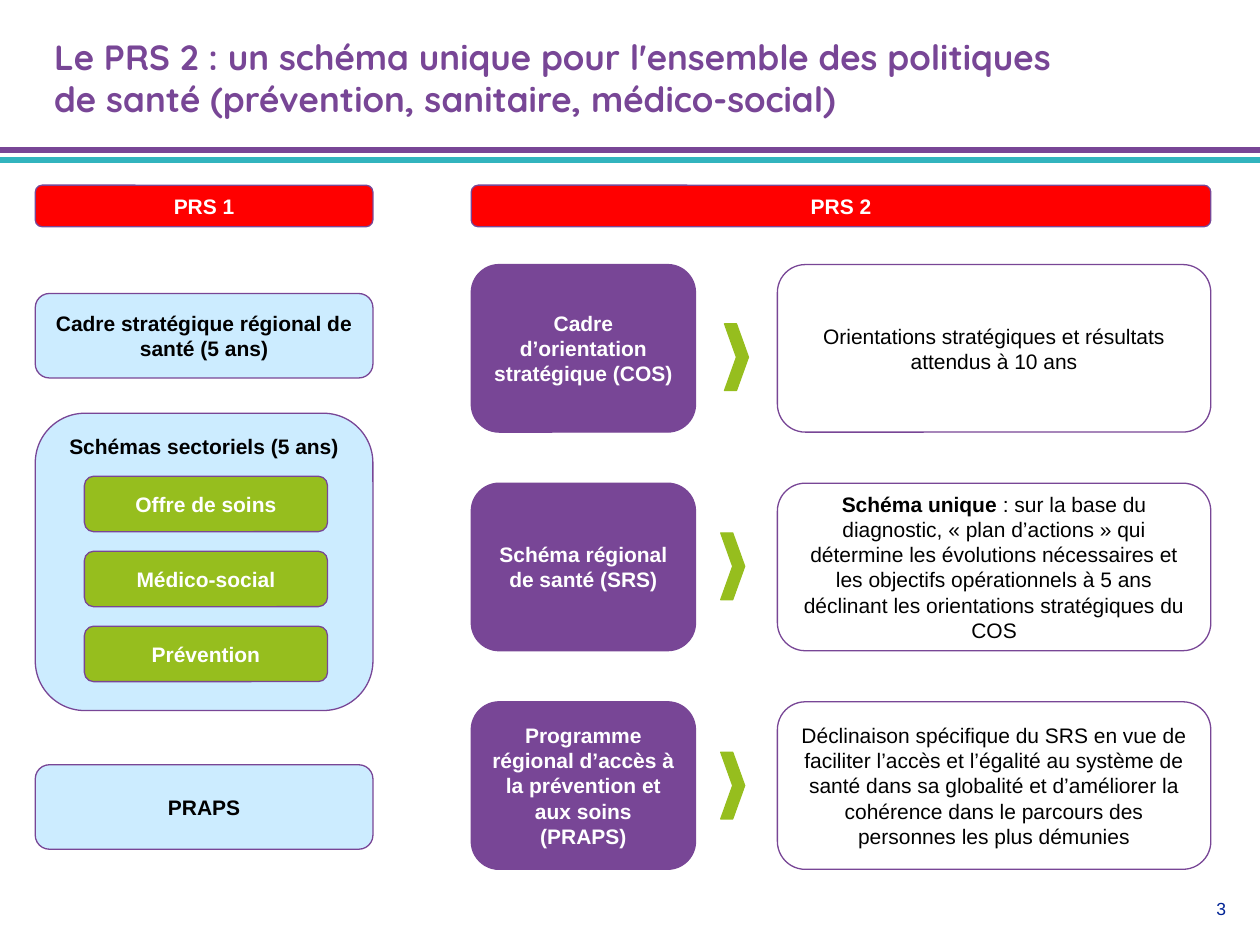
from lxml.etree import SubElement
from pptx import Presentation
from pptx.dml.color import RGBColor
from pptx.enum.shapes import MSO_CONNECTOR, MSO_SHAPE
from pptx.enum.text import MSO_ANCHOR, PP_ALIGN
from pptx.oxml.ns import qn
from pptx.util import Inches, Pt

PURPLE, TEAL, GREEN = "784696", "32B4BE", "96BE1E"
RED, PALE, WHITE, BLACK, NAVY = "FF0000", "CCECFF", "FFFFFF", "000000", "002395"


def color(code):
    return RGBColor.from_string(code)


class Deck:
    """Holds the style and the slide, laid out on a grid of 100 columns by 75 rows."""

    def __init__(self):
        self.prs = Presentation()
        self.prs.slide_width, self.prs.slide_height = Inches(10), Inches(7.5)
        self.col = self.prs.slide_width / 100
        self.row = self.prs.slide_height / 75
        self.font, self.size = "Arial", 12
        self.slide = self.prs.slides.add_slide(self.prs.slide_layouts[5])

    def frame(self, x, y, w, h):
        return (round(x * self.col), round(y * self.row),
                round(w * self.col), round(h * self.row))

    def style(self, font, ink, size, bold, name=None):
        font.name, font.size, font.bold = name or self.font, Pt(size), bold
        font.color.rgb = color(ink)

    def title(self, text, *place):
        head = self.slide.shapes.title
        head.left, head.top, head.width, head.height = self.frame(*place)
        body = head.text_frame
        body.text, body.word_wrap = text, True
        body.vertical_anchor = MSO_ANCHOR.MIDDLE
        para = body.paragraphs[0]
        para.alignment = PP_ALIGN.LEFT
        self.style(para.runs[0].font, PURPLE, 20, True, "Quicksand")

    def rule(self, y, ink):
        x, top, wide, _ = self.frame(0, y, 100, 0)
        line = self.slide.shapes.add_connector(MSO_CONNECTOR.STRAIGHT, x, top, wide, top)
        line.line.color.rgb, line.line.width = color(ink), Pt(3)
        SubElement(line._element.spPr, qn("a:effectLst"))

    def shape(self, kind, place, fill, edge):
        item = self.slide.shapes.add_shape(kind, *self.frame(*place))
        item.shadow.inherit = False
        item.fill.solid()
        item.fill.fore_color.rgb = color(fill)
        item.line.color.rgb, item.line.width = color(edge), Pt(0.75)
        return item

    def box(self, place, fill, ink, bold="", plain="", anchor=MSO_ANCHOR.MIDDLE):
        body = self.shape(MSO_SHAPE.ROUNDED_RECTANGLE, place, fill, PURPLE).text_frame
        body.word_wrap, body.vertical_anchor = True, anchor
        para = body.paragraphs[0]
        para.alignment = PP_ALIGN.CENTER
        for text, heavy in ((bold, True), (plain, False)):
            if text:
                run = para.add_run()
                run.text = text
                self.style(run.font, ink, self.size, heavy)

    def arrow(self, x, y):
        self.shape(MSO_SHAPE.CHEVRON, (x, y, 1.9, 5.3), GREEN, GREEN)

    def number(self, text, *place):
        body = self.slide.shapes.add_textbox(*self.frame(*place)).text_frame
        body.text, body.word_wrap = text, True
        para = body.paragraphs[0]
        para.alignment = PP_ALIGN.RIGHT
        self.style(para.runs[0].font, NAVY, 10, False)


def main():
    deck = Deck()
    deck.title("Le PRS 2 : un schéma unique pour l'ensemble des politiques "
               "de santé (prévention, sanitaire, médico-social)", 3.3, 2.4, 83, 7.5)
    deck.rule(11.9, PURPLE)
    deck.rule(12.7, TEAL)

    left, wide, mid = 2.8, 26.8, 37.4
    deck.box((left, 14.7, wide, 3.3), RED, WHITE, "PRS 1")
    deck.box((mid, 14.7, 58.7, 3.3), RED, WHITE, "PRS 2")

    deck.box((left, 23.3, wide, 6.7), PALE, BLACK,
             "Cadre stratégique régional de santé (5 ans)")
    deck.box((left, 32.8, wide, 23.6), PALE, BLACK,
             "Schémas sectoriels (5 ans)", anchor=MSO_ANCHOR.TOP)
    for step, name in enumerate(("Offre de soins", "Médico-social", "Prévention")):
        deck.box((6.7, 37.8 + 5.95 * step, 19.3, 4.4), GREEN, WHITE, name)
    deck.box((left, 60.7, wide, 6.7), PALE, BLACK, "PRAPS")

    plans = (
        ("Cadre d’orientation stratégique (COS)", "",
         "Orientations stratégiques et résultats attendus à 10 ans", 57.5, 25.7),
        ("Schéma régional de santé (SRS)", "Schéma unique",
         " : sur la base du diagnostic, « plan d’actions » qui détermine les "
         "évolutions nécessaires et les objectifs opérationnels à 5 ans "
         "déclinant les orientations stratégiques du COS", 57.2, 42.3),
        ("Programme régional d’accès à la prévention et aux soins (PRAPS)", "",
         "Déclinaison spécifique du SRS en vue de faciliter l’accès et l’égalité "
         "au système de santé dans sa globalité et d’améliorer la cohérence dans "
         "le parcours des personnes les plus démunies", 57.2, 59.7),
    )
    for step, (name, lead, text, x, y) in enumerate(plans):
        top = 21 + 17.35 * step
        deck.box((mid, top, 17.8, 13.3), PURPLE, WHITE, name)
        deck.box((61.7, top, 34.4, 13.3), WHITE, BLACK, lead, text)
        deck.arrow(x, y)

    deck.number("3", 93.3, 70.8, 5, 5)
    deck.prs.save("out.pptx")


if __name__ == "__main__":
    main()
